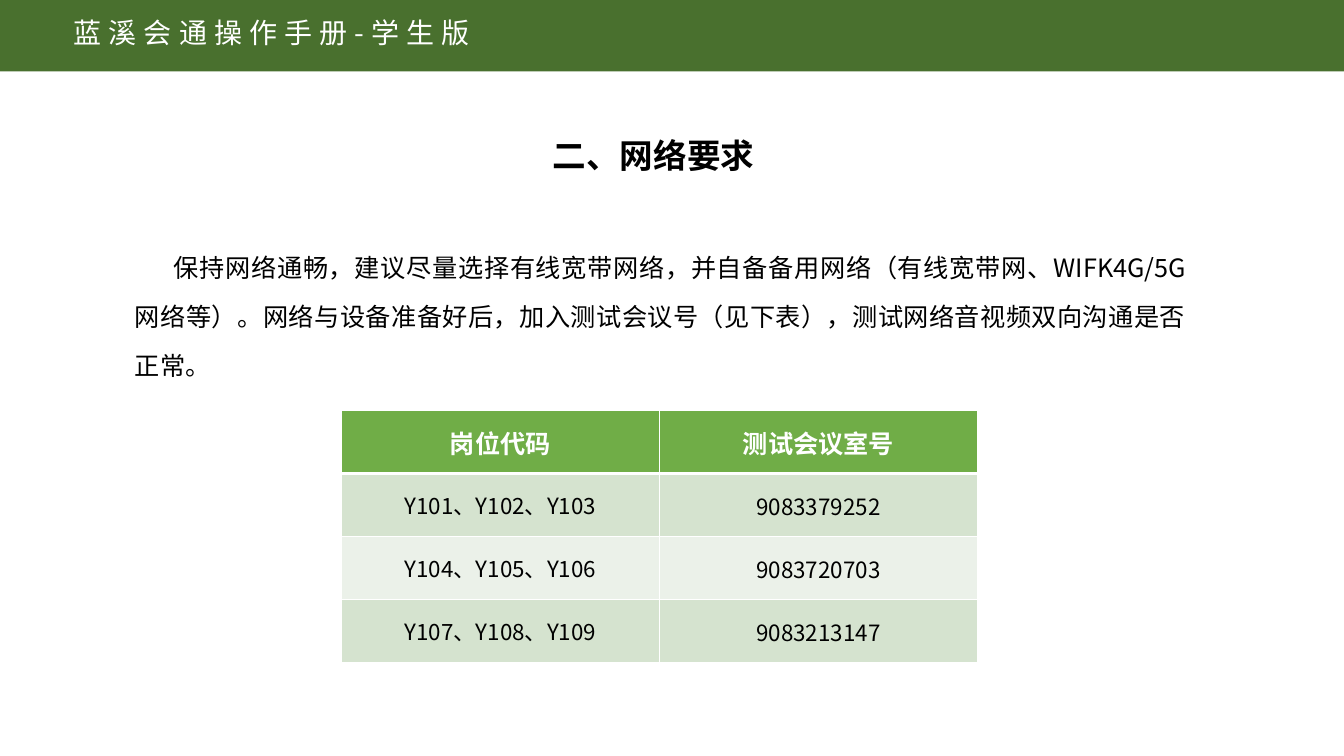
from dataclasses import dataclass
from typing import Optional

import pptx
import pptx.dml.color
import pptx.enum.shapes
import pptx.enum.text
import pptx.oxml
import pptx.oxml.ns
import pptx.util
from lxml import etree

PX = 9525
ALIGN = pptx.enum.text.PP_ALIGN
qn = pptx.oxml.ns.qn


@dataclass(frozen=True)
class Theme:
    font: str = "Noto Sans CJK SC"
    bar: str = "49702E"
    head: str = "70AD47"
    bands: tuple[str, str] = ("D5E3CF", "EBF1E9")
    white: str = "FFFFFF"
    black: str = "000000"
    title: int = 24
    banner: int = 20
    body: int = 18
    cell: int = 16


THEME = Theme()


@dataclass(frozen=True)
class Style:
    size: int
    color: str
    bold: bool = False
    spacing: int = 0


@dataclass(frozen=True)
class TextBlock:
    text: str
    box: tuple[int, int, int, int]
    style: Style
    align: Optional[ALIGN] = None
    indent: int = 0
    leading: int = 0


@dataclass(frozen=True)
class RoomRow:
    posts: str
    room: str


BLOCKS = [
    TextBlock("蓝溪会通操作手册-学生版", (61, 10, 800, 42),
              Style(THEME.banner, THEME.white, spacing=5)),
    TextBlock("保持网络通畅，建议尽量选择有线宽带网络，并自备备用网络（有线宽带网、WIFK4G/5G网络等）。"
              "网络与设备准备好后，加入测试会议号（见下表），测试网络音视频双向沟通是否正常。",
              (119, 218, 1020, 151), Style(THEME.body, THEME.black),
              ALIGN.JUSTIFY, indent=37, leading=35),
    TextBlock("二、网络要求", (517, 124, 275, 48),
              Style(THEME.title, THEME.black, bold=True)),
]
ROOMS = [
    RoomRow("岗位代码", "测试会议室号"),
    RoomRow("Y101、Y102、Y103", "9083379252"),
    RoomRow("Y104、Y105、Y106", "9083720703"),
    RoomRow("Y107、Y108、Y109", "9083213147"),
]


def px(n: int) -> int:
    return pptx.util.Emu(n * PX)


def rgb(color: str) -> pptx.dml.color.RGBColor:
    return pptx.dml.color.RGBColor.from_string(color)


def add_run(p, text: str, style: Style) -> None:
    r = p.add_run()
    r.text = text
    r.font.size = pptx.util.Pt(style.size)
    r.font.bold = style.bold
    r.font.color.rgb = rgb(style.color)
    r.font.name = THEME.font
    rPr = r.font._element
    etree.SubElement(rPr, qn("a:ea")).set("typeface", THEME.font)
    if style.spacing:
        rPr.set("spc", str(style.spacing * 100))


def add_bar(s) -> None:
    sp = s.shapes.add_shape(pptx.enum.shapes.MSO_SHAPE.RECTANGLE, 0, 0, px(1280), px(68))
    sp.shadow.inherit = False
    sp.fill.solid()
    sp.fill.fore_color.rgb = rgb(THEME.bar)
    sp.line.fill.background()


def add_text(s, block: TextBlock) -> None:
    tf = s.shapes.add_textbox(*map(px, block.box)).text_frame
    tf.word_wrap = True
    tf.auto_size = pptx.enum.text.MSO_AUTO_SIZE.SHAPE_TO_FIT_TEXT
    p = tf.paragraphs[0]
    p.alignment = block.align
    if block.leading:
        p.line_spacing = pptx.util.Pt(block.leading)
    if block.indent:
        p._p.get_or_add_pPr().set("indent", str(px(block.indent)))
    add_run(p, block.text, block.style)


def add_borders(cell, top: int, bottom: int) -> None:
    tcPr = cell._tc.get_or_add_tcPr()
    for side, width in (("L", 1), ("R", 1), ("T", top), ("B", bottom)):
        ln = etree.SubElement(tcPr, qn(f"a:ln{side}"), w=str(pptx.util.Pt(width)))
        fill = etree.SubElement(ln, qn("a:solidFill"))
        etree.SubElement(fill, qn("a:srgbClr"), val=THEME.white)


def fill_cell(cell, text: str, row: int, col: int) -> None:
    is_head = row == 0
    add_borders(cell, top=3 if row == 1 else 1, bottom=3 if is_head else 1)
    cell.fill.solid()
    cell.fill.fore_color.rgb = rgb(THEME.head if is_head else THEME.bands[(row - 1) % 2])
    cell.vertical_anchor = pptx.enum.text.MSO_ANCHOR.MIDDLE
    if col == 1 and not is_head:
        cell.margin_left = cell.margin_top = cell.margin_right = px(1)
        cell.margin_bottom = 0
    p = cell.text_frame.paragraphs[0]
    p.alignment = ALIGN.CENTER
    head = Style(THEME.body, THEME.white, bold=True)
    add_run(p, text, head if is_head else Style(THEME.cell, THEME.black))


def add_rooms(s, rooms: list[RoomRow]) -> None:
    table = s.shapes.add_table(len(rooms), 2, px(325), px(391),
                               px(606), px(60 * len(rooms))).table
    for i, room in enumerate(rooms):
        for j, text in enumerate((room.posts, room.room)):
            fill_cell(table.cell(i, j), text, i, j)


def main() -> None:
    prs = pptx.Presentation()
    prs.slide_width, prs.slide_height = px(1280), px(720)
    s = prs.slides.add_slide(prs.slide_layouts[6])
    add_bar(s)
    for block in BLOCKS:
        add_text(s, block)
    add_rooms(s, ROOMS)
    prs.save("out.pptx")


if __name__ == "__main__":
    main()
